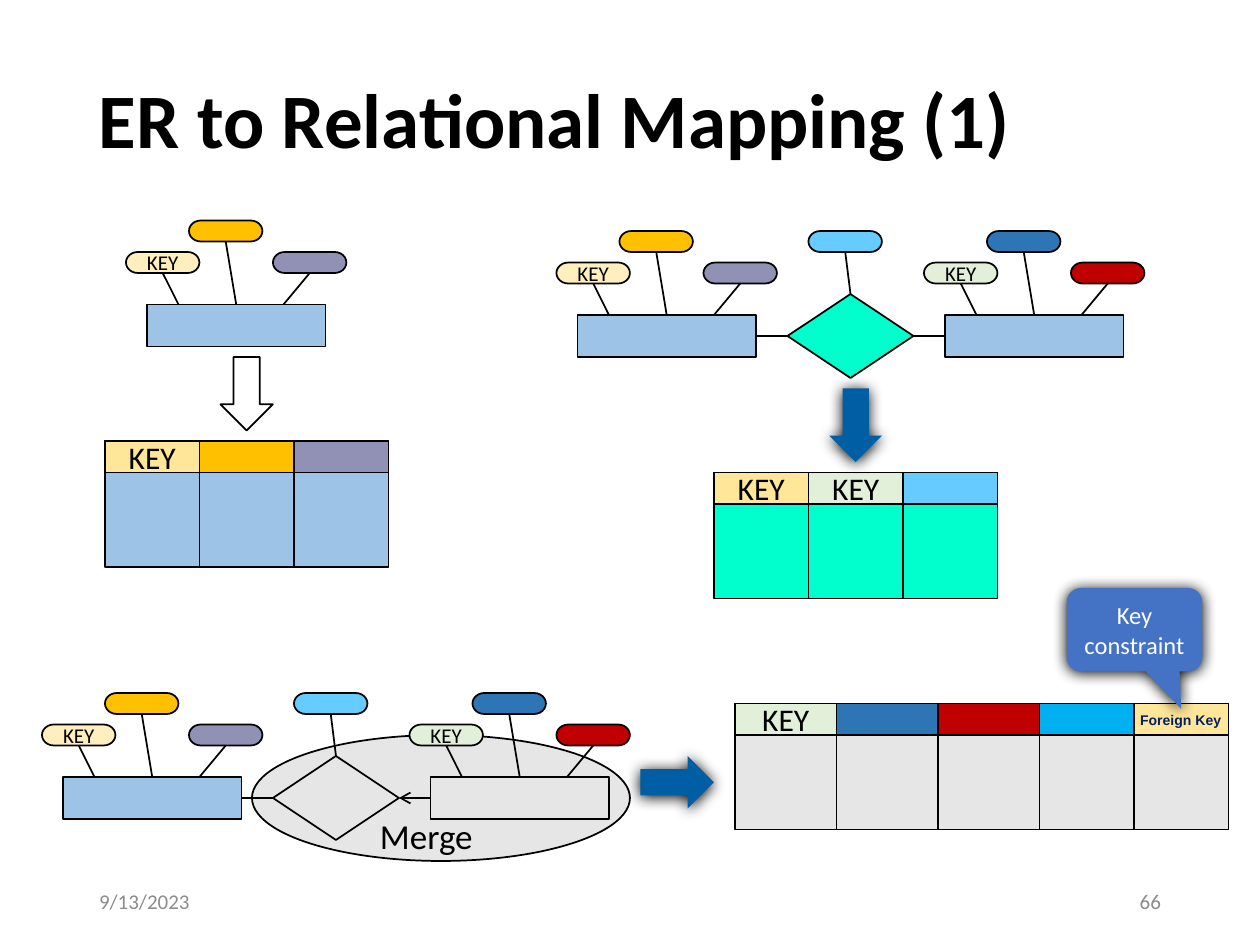
from itertools import accumulate

from lxml.etree import SubElement
from pptx import Presentation
from pptx.dml.color import RGBColor
from pptx.enum.shapes import MSO_CONNECTOR as Connector, MSO_SHAPE as Shape
from pptx.enum.text import MSO_ANCHOR as Anchor, MSO_AUTO_SIZE as AutoSize, PP_ALIGN as Align
from pptx.oxml.ns import qn
from pptx.util import Inches, Pt

UNIT = Inches(1) / 12
COLUMNS, ROWS = 120, 90
PILL_WIDTH, PILL_HEIGHT = 7, 2
HEADER_HEIGHT, TABLE_HEIGHT = 3, 12

BLACK = RGBColor(0x00, 0x00, 0x00)
WHITE = RGBColor(0xFF, 0xFF, 0xFF)
GRAY = RGBColor(0xE6, 0xE6, 0xE6)
FOOTER_GRAY = RGBColor(0x8C, 0x8C, 0x8C)
CREAM = RGBColor(0xFF, 0xEF, 0xBF)
SAND = RGBColor(0xFF, 0xE6, 0x99)
GOLD = RGBColor(0xFF, 0xC0, 0x00)
PURPLE = RGBColor(0x91, 0x91, 0xB5)
PALE_BLUE = RGBColor(0x9D, 0xC3, 0xE6)
SKY = RGBColor(0x66, 0xCC, 0xFF)
CYAN = RGBColor(0x00, 0xB0, 0xF0)
BLUE = RGBColor(0x2E, 0x75, 0xB6)
ARROW_BLUE = RGBColor(0x00, 0x5E, 0xA4)
CALLOUT_BLUE = RGBColor(0x44, 0x72, 0xC4)
NAVY = RGBColor(0x00, 0x20, 0x60)
MINT = RGBColor(0xE2, 0xF0, 0xD9)
AQUA = RGBColor(0x00, 0xFF, 0xCC)
RED = RGBColor(0xC0, 0x00, 0x00)

LEFT_ATTRIBUTES = (CREAM, GOLD, PURPLE)
RIGHT_ATTRIBUTES = (MINT, BLUE, RED)


def grid(*values):
    """Turn grid units into slide lengths."""
    return [round(value * UNIT) for value in values]


def write_text(shape, text, size=18, color=BLACK, font="Calibri", bold=False,
               align=Align.CENTER, anchor=Anchor.MIDDLE, wrap=True, spacing=None):
    """Put one formatted paragraph into a shape."""
    frame = shape.text_frame
    frame.word_wrap = wrap
    frame.auto_size = AutoSize.NONE if wrap else AutoSize.SHAPE_TO_FIT_TEXT
    frame.vertical_anchor = anchor
    paragraph = frame.paragraphs[0]
    paragraph.alignment = align
    paragraph.line_spacing = spacing
    run = paragraph.add_run()
    run.text = text
    run.font.name, run.font.size, run.font.bold = font, Pt(size), bold
    run.font.color.rgb = color


def add_label(shapes, box, text, **text_format):
    """Add a text box with one formatted paragraph."""
    write_text(shapes.add_textbox(*grid(*box)), text, **{"align": Align.LEFT, **text_format})


def add_block(shapes, kind, box, fill=None, outlined=True):
    """Add a preset shape with an optional fill and thin black outline."""
    shape = shapes.add_shape(kind, *grid(*box))
    shape.shadow.inherit = False
    if fill is None:
        shape.fill.background()
    else:
        shape.fill.solid()
        shape.fill.fore_color.rgb = fill
    if outlined:
        shape.line.color.rgb = BLACK
        shape.line.width = Pt(1)
    else:
        shape.line.fill.background()
    return shape


def add_line(shapes, start, end, arrow=False):
    """Add a thin black line, with an open arrowhead at its start if asked."""
    line = shapes.add_connector(Connector.STRAIGHT, *grid(*start, *end))
    line.line.color.rgb = BLACK
    line.line.width = Pt(1)
    properties = line._element.spPr
    if arrow:
        SubElement(properties.find(qn("a:ln")), qn("a:headEnd"), type="arrow")
    SubElement(properties, qn("a:effectLst"))


def add_glow(shape):
    """Give a shape a soft black shadow."""
    effects = shape._element.spPr.find(qn("a:effectLst"))
    shadow = SubElement(effects, qn("a:outerShdw"), blurRad=str(Pt(8.5)),
                        dist=str(Pt(1)), dir="5400000", rotWithShape="0")
    SubElement(shadow, qn("a:srgbClr"), val=str(BLACK))


def draw_attribute(shapes, left, top, color, key=False):
    """Draw one attribute pill."""
    pill = add_block(shapes, Shape.FLOWCHART_TERMINATOR,
                     (left, top, PILL_WIDTH, PILL_HEIGHT), color)
    if key:
        write_text(pill, "KEY", size=12)


def draw_entity(shapes, left, top, attributes, fill=PALE_BLUE):
    """Draw an entity with a key and two more attributes."""
    places = ((0, 3, 5), (6, 0, 10.5), (14, 3, 15))
    for index, ((x, y, _), color) in enumerate(zip(places, attributes)):
        draw_attribute(shapes, left + x, top + y, color, key=index == 0)
    add_block(shapes, Shape.FLOWCHART_PROCESS, (left + 2, top + 8, 17, 4), fill)
    for x, y, foot in places:
        add_line(shapes, (left + x + PILL_WIDTH / 2, top + y + PILL_HEIGHT),
                 (left + foot, top + 8))


def draw_relationship(shapes, left, top, diamond_fill, right_fill, arrow=False):
    """Draw two entities joined by a relationship with its own attribute."""
    draw_entity(shapes, left, top, LEFT_ATTRIBUTES)
    draw_entity(shapes, left + 35, top, RIGHT_ATTRIBUTES, right_fill)
    add_block(shapes, Shape.DIAMOND, (left + 22, top + 6, 12, 8), diamond_fill)
    add_line(shapes, (left + 34, top + 10), (left + 37, top + 10), arrow)
    add_line(shapes, (left + 19, top + 10), (left + 22, top + 10))
    draw_attribute(shapes, left + 24, top, SKY)
    add_line(shapes, (left + 27.5, top + 2), (left + 28, top + 6))


def draw_relation(shapes, left, top, widths, colors, fill, keys):
    """Draw a relation as a body with coloured header cells."""
    edges = list(accumulate(widths, initial=left))
    add_block(shapes, Shape.RECTANGLE, (left, top, sum(widths), TABLE_HEIGHT), fill)
    add_line(shapes, (left, top + HEADER_HEIGHT), (edges[-1], top + HEADER_HEIGHT))
    for edge in edges[1:-1]:
        add_line(shapes, (edge, top), (edge, top + TABLE_HEIGHT))
    for index, (edge, width, color) in enumerate(zip(edges, widths, colors)):
        cell = add_block(shapes, Shape.FLOWCHART_PROCESS,
                         (edge, top, width, HEADER_HEIGHT), color)
        if index < keys:
            write_text(cell, "KEY")


def draw_arrow(shapes, left, top, fill=None, rotation=0):
    """Draw a block arrow, outlined when empty and shadowed when filled."""
    arrow = add_block(shapes, Shape.DOWN_ARROW, (left, top, 5, 7), fill, fill is None)
    arrow.rotation = rotation
    if fill is not None:
        add_glow(arrow)


def draw_merge_area(shapes, left, top):
    """Draw the ellipse that marks the merged parts."""
    add_block(shapes, Shape.OVAL, (left, top, 36, 12), GRAY)
    add_label(shapes, (left + 11, top + 7, 11.4, 5.25), "Merge", size=20,
              anchor=Anchor.TOP, wrap=False)


def draw_callout(shapes, left, top):
    """Draw the callout that points at the foreign key."""
    callout = add_block(shapes, Shape.ROUNDED_RECTANGULAR_CALLOUT,
                        (left, top, 12.9, 7.95), CALLOUT_BLUE, outlined=False)
    for index, value in enumerate((0.345, 0.95, 0.167)):
        callout.adjustments[index] = value
    callout.text_frame.margin_left = callout.text_frame.margin_right = 0
    write_text(callout, "Key constraint", size=14, color=WHITE)
    add_glow(callout)


def draw_footer(shapes, left, top, width):
    """Write the date and the slide number."""
    for x, text, align in ((left, "9/13/2023", Align.LEFT),
                           (left + width - 27, "66", Align.RIGHT)):
        add_label(shapes, (x, top, 27, 4.8), text, size=12, color=FOOTER_GRAY, align=align)


def main():
    """Build the slide and save it."""
    presentation = Presentation()
    presentation.slide_width, presentation.slide_height = grid(COLUMNS, ROWS)
    slide = presentation.slides.add_slide(presentation.slide_layouts[6])
    shapes = slide.shapes

    def new_group():
        """Add an empty group and return its shapes."""
        return shapes.add_group_shape().shapes

    draw_merge_area(new_group(), 24, 70)
    add_label(shapes, (8.25, 3.1, 103.5, 17.4), "ER to Relational Mapping (1)",
              size=44, bold=True, spacing=0.9)
    draw_entity(new_group(), 12, 21, LEFT_ATTRIBUTES)
    draw_relation(new_group(), 10, 42, [9] * 3, (SAND, GOLD, PURPLE), PALE_BLUE, keys=1)
    draw_arrow(shapes, 21, 34)
    draw_relationship(new_group(), 53, 22, AQUA, PALE_BLUE)
    draw_relation(new_group(), 68, 45, [9] * 3, (SAND, MINT, SKY), AQUA, keys=2)
    draw_arrow(shapes, 79, 37, ARROW_BLUE)
    draw_relationship(new_group(), 4, 66, GRAY, GRAY, arrow=True)
    draw_arrow(shapes, 62, 71, ARROW_BLUE, rotation=270)
    merged = new_group()
    draw_relation(merged, 70, 67, [29 / 3] * 3 + [9] * 2,
                  (MINT, BLUE, RED, CYAN, SAND), GRAY, keys=1)
    add_label(merged, (107.4, 67.2, 10.2, 2.9), "Foreign Key", size=8, color=NAVY,
              font="Arial", bold=True, anchor=Anchor.TOP, wrap=False)
    draw_footer(shapes, 8.25, 83.4, 103.5)
    draw_callout(shapes, 101.6, 56)
    presentation.save("out.pptx")


if __name__ == "__main__":
    main()
